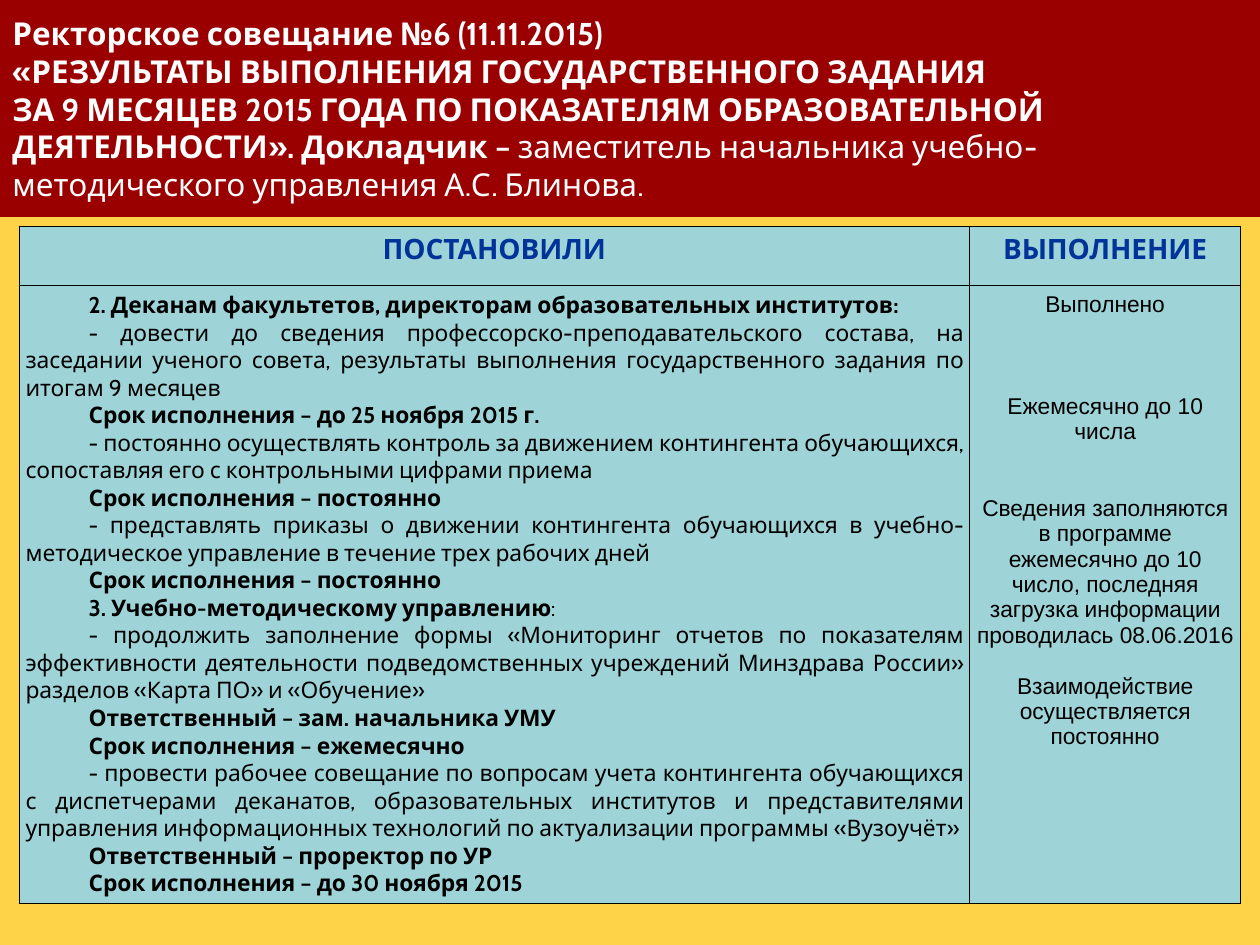
"""Build the rector's meeting slide: a title band above a table of decisions."""
from lxml.etree import SubElement as Sub
from pptx import Presentation
from pptx.dml.color import RGBColor as RGB
from pptx.enum.shapes import MSO_SHAPE as Shape
from pptx.enum.text import MSO_ANCHOR as Anchor, PP_ALIGN as Align
from pptx.oxml.ns import qn
from pptx.util import Pt

TITLE = [
    [("Ректорское совещание №6 (11.11.2015)", True)],
    [("«РЕЗУЛЬТАТЫ ВЫПОЛНЕНИЯ ГОСУДАРСТВЕННОГО ЗАДАНИЯ", True)],
    [("ЗА 9 МЕСЯЦЕВ 2015 ГОДА ПО ПОКАЗАТЕЛЯМ ОБРАЗОВАТЕЛЬНОЙ", True)],
    [("ДЕЯТЕЛЬНОСТИ». Докладчик – ", True), ("заместитель начальника учебно-", False)],
    [("методического управления А.С. Блинова.", False)],
]
HEADS = ["ПОСТАНОВИЛИ", "ВЫПОЛНЕНИЕ"]
TASKS = [
    [("2. Деканам факультетов, директорам образовательных институтов:", True)],
    [("- довести до сведения профессорско-преподавательского состава, на заседании ученого совета, "
      "результаты выполнения государственного задания по итогам 9 месяцев", False)],
    [("Срок исполнения – до 25 ноября 2015 г.", True)],
    [("- постоянно осуществлять контроль за движением контингента обучающихся, "
      "сопоставляя его с контрольными цифрами приема", False)],
    [("Срок исполнения – постоянно", True)],
    [("- представлять приказы о движении контингента обучающихся в учебно-методическое "
      "управление в течение трех рабочих дней", False)],
    [("Срок исполнения – постоянно", True)],
    [("3. Учебно-методическому управлению", True), (":", False)],
    [("- продолжить заполнение формы «Мониторинг отчетов по показателям эффективности деятельности "
      "подведомственных учреждений Минздрава России» разделов «Карта ПО» и «Обучение»", False)],
    [("Ответственный – зам. начальника УМУ", True)],
    [("Срок исполнения – ежемесячно", True)],
    [("- провести рабочее совещание по вопросам учета контингента обучающихся с диспетчерами "
      "деканатов, образовательных институтов и представителями управления информационных "
      "технологий по актуализации программы «Вузоучёт»", False)],
    [("Ответственный – проректор по УР", True)],
    [("Срок исполнения – до 30 ноября 2015", True)],
]
STATES = [
    ("Выполнено", 0),
    ("Ежемесячно до 10 числа", 3),
    ("Сведения заполняются в программе ежемесячно до 10 число, последняя загрузка "
     "информации проводилась 08.06.2016", 2),
    ("Взаимодействие осуществляется постоянно", 1),
]
THEME = {
    "back": "FFD347", "band": "9A0000", "cell": "9ED3D7", "edge": "000000",
    "title": ("Cabin", 18, "FFFFFF"), "head": ("Cabin", 16, "003399"),
    "task": ("Cabin", 13, "000000"), "state": ("Arial", 13, "000000"),
}
WIDE, HIGH, BAND = 720, 540, 124
LEFT, TOP, COLS, ROWS = 11, 129.3, (543, 155), (33.8, 352.8)
PAD, INDENT, LINE = 3.6, 36, 14.6


def paint(fill, name):
    fill.solid()
    fill.fore_color.rgb = RGB.from_string(THEME[name])


def style(font, role, bold):
    font.name, size, tone = THEME[role]
    font.size, font.bold = Pt(size), bold
    font.color.rgb = RGB.from_string(tone)


def write(para, parts, role):
    for text, bold in parts:
        run = para.add_run()
        run.text = text
        style(run.font, role, bold)


def paras(frame, count):
    return [frame.paragraphs[0]] + [frame.add_paragraph() for _ in range(count - 1)]


def dress(cell):
    cell.margin_left = cell.margin_right = cell.margin_top = cell.margin_bottom = Pt(PAD)
    cell.vertical_anchor = Anchor.TOP
    props = cell._tc.get_or_add_tcPr()
    for side in ("lnL", "lnR", "lnT", "lnB"):
        edge = Sub(props, qn(f"a:{side}"), w=str(Pt(1)))
        Sub(Sub(edge, qn("a:solidFill")), qn("a:srgbClr"), val=THEME["edge"])
    paint(cell.fill, "cell")


def add_grid(slide):
    frame = slide.shapes.add_table(2, 2, Pt(LEFT), Pt(TOP), Pt(sum(COLS)), Pt(sum(ROWS)))
    table = frame.table
    table.horz_banding = False
    for col, width in zip(table.columns, COLS):
        col.width = Pt(width)
    for row, height in zip(table.rows, ROWS):
        row.height = Pt(height)
    for cell in table.iter_cells():
        dress(cell)
    for col, text in enumerate(HEADS):
        para = table.cell(0, col).text_frame.paragraphs[0]
        para.alignment = Align.CENTER
        write(para, [(text, True)], "head")
    for para, parts in zip(paras(table.cell(1, 0).text_frame, len(TASKS)), TASKS):
        para.alignment = Align.JUSTIFY
        para._p.get_or_add_pPr().set("indent", str(Pt(INDENT)))
        write(para, parts, "task")
    for para, (text, gap) in zip(paras(table.cell(1, 1).text_frame, len(STATES)), STATES):
        para.alignment = Align.CENTER
        if gap:
            para.space_before = Pt(gap * LINE)
        write(para, [(text, False)], "state")


def add_band(slide):
    band = slide.shapes.add_shape(Shape.RECTANGLE, 0, 0, Pt(WIDE), Pt(BAND))
    band.shadow.inherit = False
    paint(band.fill, "band")
    band.line.fill.background()
    frame = band.text_frame
    frame.word_wrap, frame.vertical_anchor = True, Anchor.MIDDLE
    para = frame.paragraphs[0]
    para.alignment = Align.LEFT
    style(para.font, "title", True)
    for num, parts in enumerate(TITLE):
        if num:
            para.add_line_break()
        write(para, parts, "title")


def main():
    deck = Presentation()
    deck.slide_width, deck.slide_height = Pt(WIDE), Pt(HIGH)
    slide = deck.slides.add_slide(deck.slide_layouts[6])
    paint(slide.background.fill, "back")
    add_grid(slide)
    add_band(slide)
    deck.save("out.pptx")


if __name__ == "__main__":
    main()
